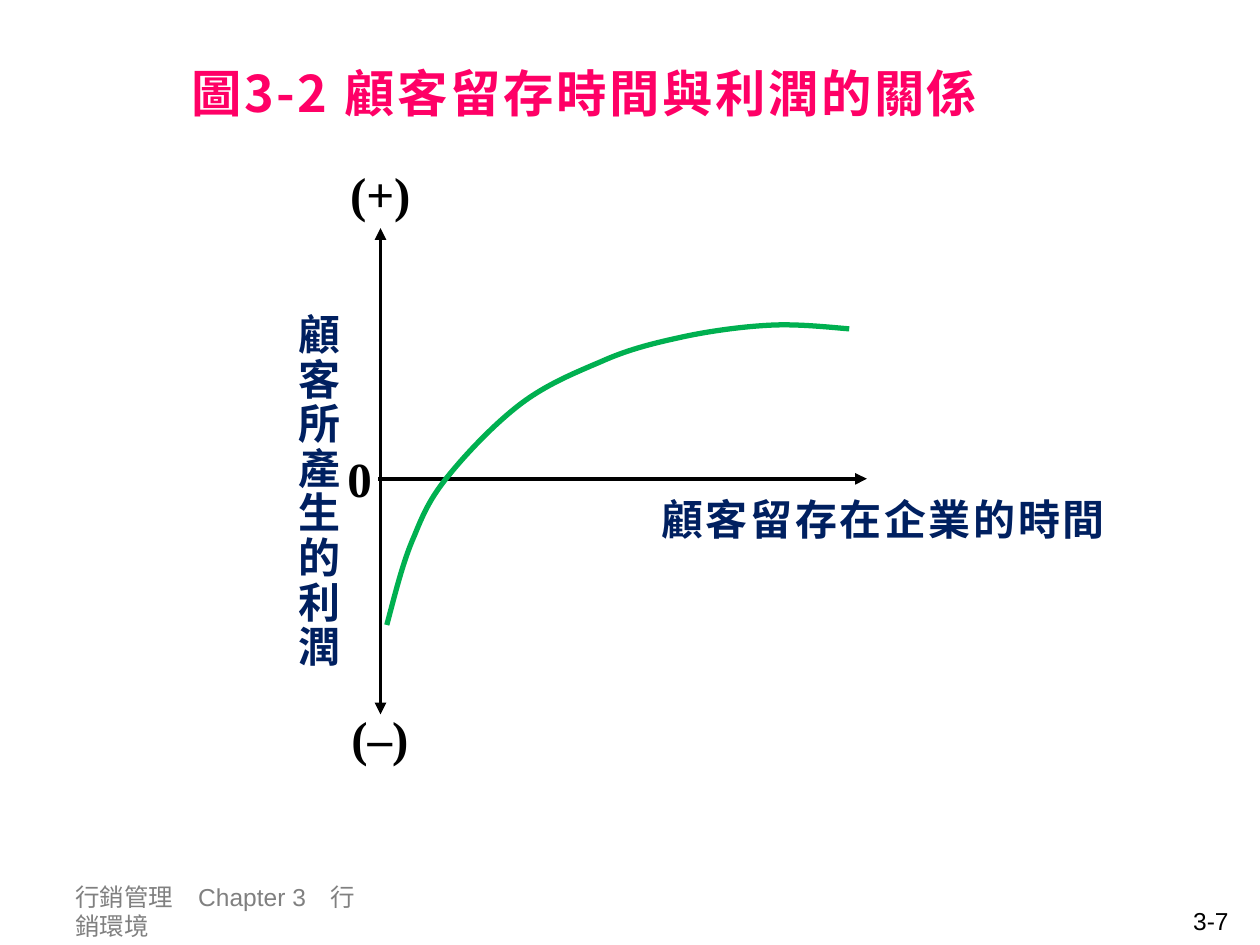
from dataclasses import dataclass
from typing import Optional

from lxml.etree import SubElement
from pptx import Presentation
from pptx.dml.color import RGBColor
from pptx.enum.shapes import MSO_CONNECTOR as Connector
from pptx.enum.text import MSO_ANCHOR as Anchor, MSO_AUTO_SIZE as AutoSize, PP_ALIGN as Align
from pptx.oxml.ns import qn
from pptx.util import Inches, Pt

COLORS = {
    "title": "FF0066",
    "label": "002060",
    "black": "000000",
    "footer": "808080",
    "curve": "00B050",
}
CJK, SERIF, SANS = "Noto Sans CJK SC", "Times New Roman", "Arial"


@dataclass
class Label:
    text: str
    left: float
    top: float
    width: float
    height: float
    size: float
    font: str
    color: str
    bold: bool = True
    spacing: float = 0
    align: Align = Align.LEFT
    anchor: Anchor = Anchor.TOP
    wrap: bool = False
    vertical: bool = False


@dataclass
class Axis:
    start: tuple[float, float]
    end: tuple[float, float]
    arrows: tuple[str, ...]


TITLE = Label("圖3-2 顧客留存時間與利潤的關係", 1.3, 0.31, 6.68, 0.85, 28.8, CJK, "title",
              spacing=1.5, align=Align.CENTER, anchor=Anchor.MIDDLE, wrap=True)
FOOTERS = [
    Label("行銷管理　Chapter 3　行銷環境", 0.5, 6.95, 2.56, 0.4, 14, SANS, "footer",
          bold=False, wrap=True),
    Label("3-7", 7.52, 7.14, 2.33, 0.29, 14, SANS, "black",
          bold=False, align=Align.RIGHT, wrap=True),
]
AXES = [
    Axis((3.02, 1.81), (3.02, 5.67), ("headEnd", "tailEnd")),
    Axis((3, 3.8), (6.88, 3.8), ("tailEnd",)),
]
AXIS_LABELS = [
    Label("(+)", 2.68, 1.25, 0.68, 0.57, 28, SERIF, "black"),
    Label("(–)", 2.69, 5.57, 0.66, 0.57, 28, SERIF, "black"),
    Label("0", 2.66, 3.51, 0.4, 0.57, 28, SERIF, "black"),
    Label("顧客留存在企業的時間", 5.15, 3.87, 3.78, 0.51, 24, CJK, "label", spacing=1.5),
    Label("顧客所產生的利潤", 2.16, 2.39, 0.61, 2.96, 24, CJK, "label",
          spacing=1.5, vertical=True),
]
# Start point, then two control points and an end point per curve section
CURVE = [
    (3.07, 4.96),
    (3.14, 4.7), (3.2, 4.45), (3.29, 4.25),
    (3.37, 4.05), (3.43, 3.93), (3.58, 3.75),
    (3.72, 3.58), (3.94, 3.35), (4.14, 3.2),
    (4.34, 3.05), (4.56, 2.96), (4.77, 2.87),
    (4.97, 2.78), (5.16, 2.73), (5.39, 2.68),
    (5.61, 2.63), (5.9, 2.59), (6.13, 2.58),
    (6.35, 2.57), (6.61, 2.6), (6.74, 2.61),
]


def rgb(name: str) -> RGBColor:
    return RGBColor.from_string(COLORS[name])


def add_label(shapes, label: Label) -> None:
    box = shapes.add_textbox(Inches(label.left), Inches(label.top),
                             Inches(label.width), Inches(label.height))
    frame = box.text_frame
    frame.text = label.text
    frame.word_wrap = label.wrap
    frame.auto_size = AutoSize.NONE if label.wrap else AutoSize.SHAPE_TO_FIT_TEXT
    frame.vertical_anchor = label.anchor
    if label.vertical:
        frame._txBody.bodyPr.set("vert", "eaVert")
    paragraph = frame.paragraphs[0]
    paragraph.alignment = label.align
    run = paragraph.runs[0]
    run.font.size = Pt(label.size)
    run.font.bold = label.bold
    run.font.color.rgb = rgb(label.color)
    run.font.name = label.font
    properties = run._r.get_or_add_rPr()
    SubElement(properties, qn("a:ea")).set("typeface", CJK)
    if label.spacing:
        properties.set("spc", str(int(label.spacing * 100)))


def add_axis(shapes, axis: Axis) -> None:
    connector = shapes.add_connector(Connector.STRAIGHT,
                                     *map(Inches, axis.start + axis.end))
    connector.line.color.rgb = rgb("black")
    connector.line.width = Pt(2.25)
    line = connector.line._get_or_add_ln()
    for arrow in axis.arrows:
        SubElement(line, qn(f"a:{arrow}")).set("type", "triangle")
    SubElement(connector._element.spPr, qn("a:effectLst"))


def add_curve(shapes, points: list[tuple[float, float]]) -> None:
    start, *rest = [(Inches(x), Inches(y)) for x, y in points]
    builder = shapes.build_freeform(*start)
    builder.add_line_segments(rest, close=False)
    shape = builder.convert_to_shape()
    shape.shadow.inherit = False
    shape.fill.background()
    shape.line.color.rgb = rgb("curve")
    shape.line.width = Pt(3)
    # Turn every three line segments into one cubic section
    outline = next(shape._element.iter(qn("a:path")))
    section: Optional[object] = None
    for index, segment in enumerate(outline.findall(qn("a:lnTo"))):
        if index % 3 == 0:
            section = SubElement(outline, qn("a:cubicBezTo"))
        section.append(segment[0])
        outline.remove(segment)


def main() -> None:
    presentation = Presentation()
    presentation.slide_width, presentation.slide_height = Inches(10), Inches(7.5)
    slide = presentation.slides.add_slide(presentation.slide_layouts[6])

    # Title and footer
    for label in [TITLE, *FOOTERS]:
        add_label(slide.shapes, label)

    # Axes with their labels
    diagram = slide.shapes.add_group_shape()
    for axis in AXES:
        add_axis(diagram.shapes, axis)
    for label in AXIS_LABELS:
        add_label(diagram.shapes, label)

    # Profit curve
    add_curve(slide.shapes, CURVE)
    presentation.save("out.pptx")


if __name__ == "__main__":
    main()
